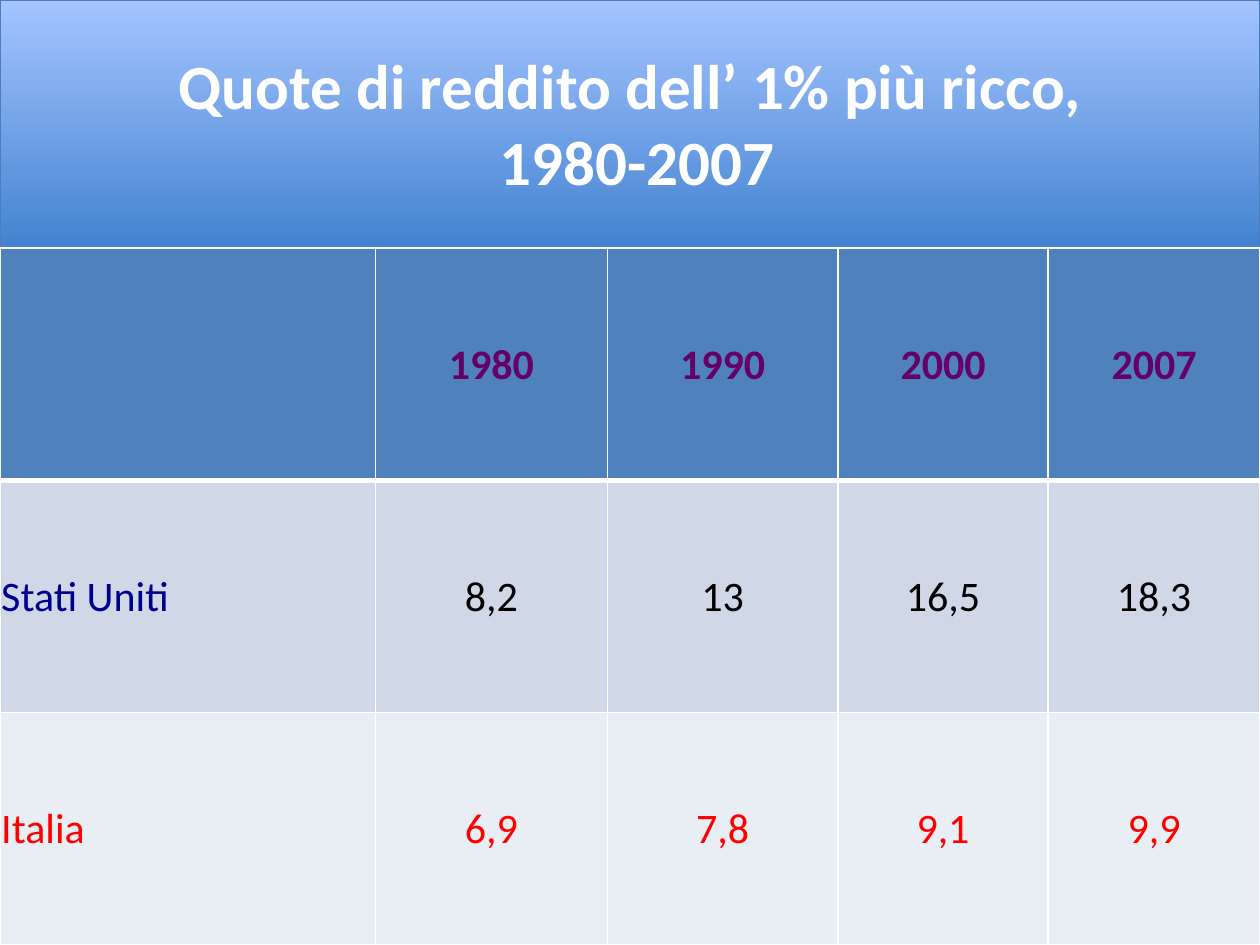
from lxml.etree import SubElement
from pptx import Presentation
from pptx.dml.color import RGBColor
from pptx.enum.text import MSO_ANCHOR, MSO_AUTO_SIZE, PP_ALIGN
from pptx.oxml.ns import qn
from pptx.util import Inches, Pt

WHITE = RGBColor(0xFF, 0xFF, 0xFF)
BLACK = RGBColor(0x00, 0x00, 0x00)
RED = RGBColor(0xFF, 0x00, 0x00)
NAVY = RGBColor(0x00, 0x00, 0x90)
PURPLE = RGBColor(0x66, 0x00, 0x66)
TITLE_BOTTOM = RGBColor(0x3F, 0x80, 0xCE)
TITLE_TOP = RGBColor(0xA4, 0xC4, 0xFF)
TITLE_LINE = RGBColor(0x4B, 0x7E, 0xBC)
HEADER_FILL = RGBColor(0x4F, 0x81, 0xBD)
BAND_DARK = RGBColor(0xD0, 0xD8, 0xE8)
BAND_LIGHT = RGBColor(0xE9, 0xED, 0xF4)


def add_run(p, text, size, color, bold):
    r = p.add_run()
    r.text = text
    r.font.name = "Calibri"
    r.font.size = Pt(size)
    r.font.bold = bold
    r.font.color.rgb = color


def set_border(cell, side, width):
    ln = SubElement(cell._tc.get_or_add_tcPr(), qn(f"a:ln{side}"), w=str(Pt(width)))
    fill = SubElement(ln, qn("a:solidFill"))
    SubElement(fill, qn("a:srgbClr"), val=str(WHITE))


prs = Presentation()
prs.slide_width, prs.slide_height = Inches(10), Inches(7.5)
s = prs.slides.add_slide(prs.slide_layouts[5])

# Title band
title = s.shapes.title
title.left, title.top = 0, 0
title.width, title.height = prs.slide_width, Inches(2.06)
title.fill.gradient()
title.fill.gradient_angle = 90
for stop, color in zip(title.fill.gradient_stops, (TITLE_BOTTOM, TITLE_TOP)):
    stop.color.rgb = color
for position, stop in enumerate(title.fill.gradient_stops):
    stop.position = position
title.line.color.rgb = TITLE_LINE
title.line.width = Pt(0.75)

tf = title.text_frame
tf.word_wrap = True
tf.auto_size = MSO_AUTO_SIZE.NONE
tf.vertical_anchor = MSO_ANCHOR.MIDDLE
tf.margin_bottom = Inches(0.17)
p = tf.paragraphs[0]
p.alignment = PP_ALIGN.CENTER
add_run(p, "Quote di reddito dell’ 1% più ricco,", 36, WHITE, True)
p.add_line_break()
add_run(p, " 1980-2007", 36, WHITE, True)

# Table: texts, fill, label colour, value colour, bold
rows = [
    (["", "1980", "1990", "2000", "2007"], HEADER_FILL, PURPLE, PURPLE, True),
    (["Stati Uniti", "8,2", "13", "16,5", "18,3"], BAND_DARK, NAVY, BLACK, False),
    (["Italia", "6,9", "7,8", "9,1", "9,9"], BAND_LIGHT, RED, RED, False),
]
col_widths = [2.98, 1.84, 1.83, 1.67, 1.68]
top = Inches(1.97)
height = prs.slide_height - top
table = s.shapes.add_table(len(rows), len(col_widths), 0, top,
                           prs.slide_width, height).table
for col, width in zip(table.columns, col_widths):
    col.width = Inches(width)

for i, (texts, fill, label_color, value_color, bold) in enumerate(rows):
    table.rows[i].height = height // len(rows)
    for j, text in enumerate(texts):
        cell = table.cell(i, j)
        cell.margin_left = cell.margin_right = cell.margin_top = Inches(0.01)
        cell.margin_bottom = 0
        cell.vertical_anchor = MSO_ANCHOR.MIDDLE
        # The rule under the header row is thicker
        for side in "LRTB":
            set_border(cell, side, 3 if (i, side) in ((0, "B"), (1, "T")) else 1)
        cell.fill.solid()
        cell.fill.fore_color.rgb = fill
        if text:
            p = cell.text_frame.paragraphs[0]
            p.alignment = PP_ALIGN.CENTER if j else PP_ALIGN.LEFT
            add_run(p, text, 24, value_color if j else label_color, bold)

prs.save("out.pptx")
